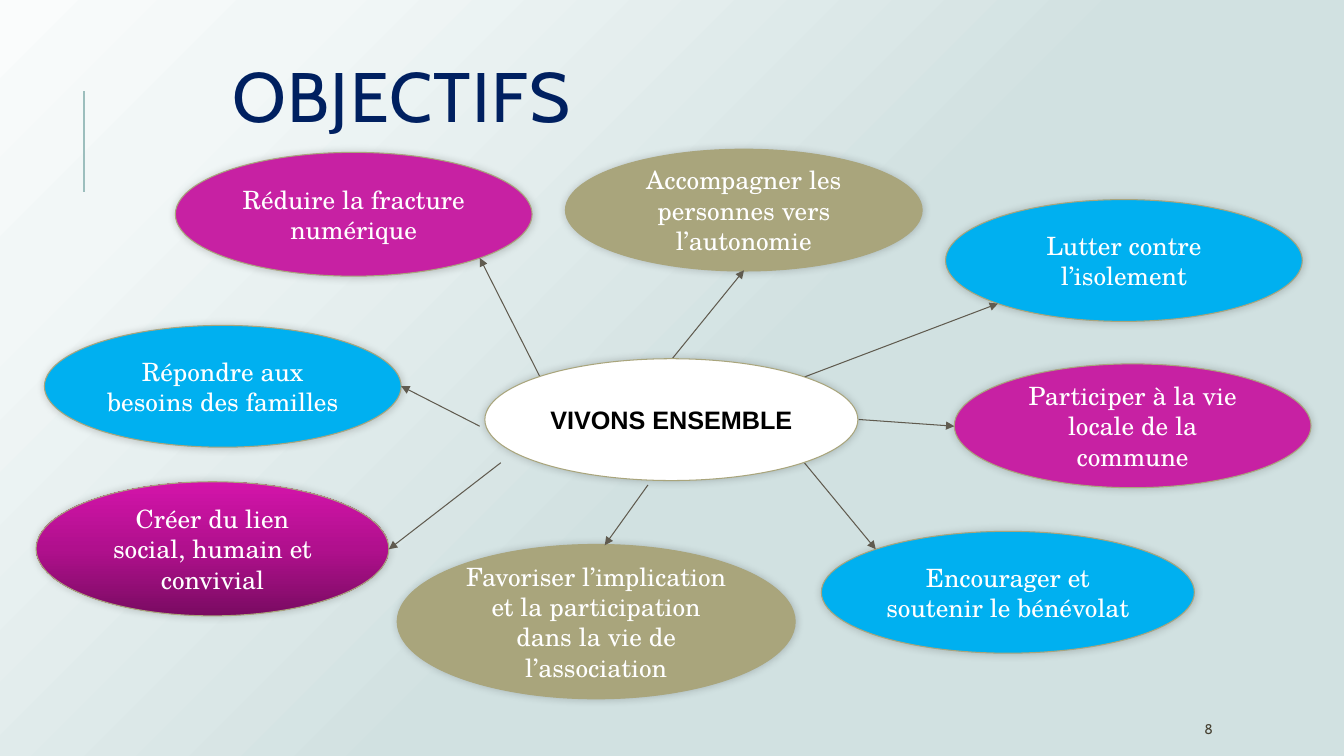
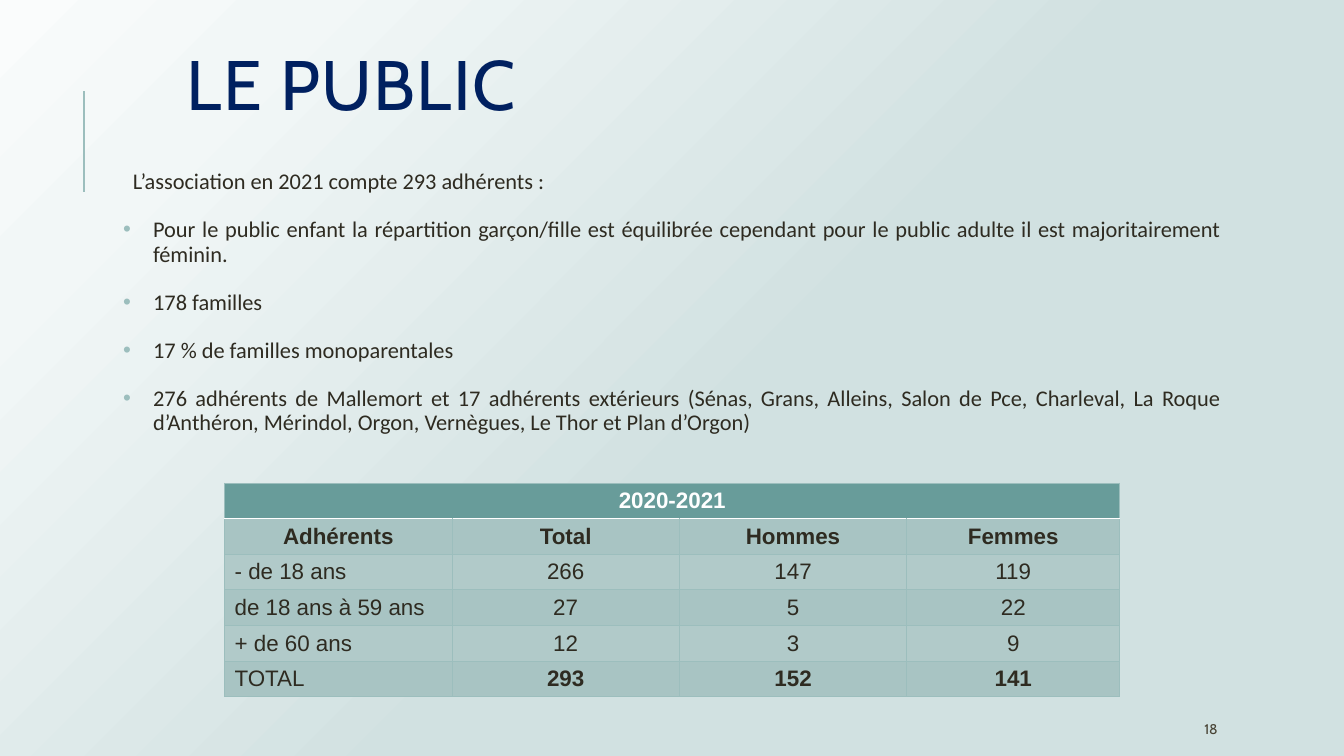
from pptx import Presentation
from pptx.dml.color import RGBColor as RGB
from pptx.enum.shapes import MSO_CONNECTOR as CONN, MSO_SHAPE as SHAPE
from pptx.enum.text import MSO_ANCHOR as ANCHOR, MSO_AUTO_SIZE as AUTO, PP_ALIGN as ALIGN
from pptx.oxml import parse_xml
from pptx.util import Cm, Pt

NS = 'xmlns:a="http://schemas.openxmlformats.org/drawingml/2006/main"'
C = {
    "navy": "002060", "ink": "2E2B21", "number": "474233", "white": "FFFFFF", "black": "000000",
    "teal": "9CBEBD", "header": "689C9A", "band": "A8C4C3", "plain": "B1CAC9",
    "khaki": "A9A57C", "pink": "C721A3", "blue": "00B0F0", "arrow": "605B4F",
}
BACKGROUND = [(0, "FAFCFC"), (15, "F2F7F7"), (55, "D1E1E1"), (100, "D2E2E1")]
PINK_FADE = [(0, "7A0B62"), (50, "B0108D"), (100, "D314AA")]

# Text formats
TITLE = {"name": "Cabin", "size": Pt(50), "bold": False}
NUMBER = {"name": "Cabin", "size": Pt(10)}
BODY = {"name": "Calibri", "size": Pt(16)}
GOAL = {"name": "TeX Gyre Schola", "size": Pt(18)}
CENTRE = {"name": "Arial", "size": Pt(18), "bold": True}
CELL = {"name": "Arial", "size": Pt(16), "bold": False}


def write(p, text, fmt, color, align=ALIGN.LEFT):
    p.alignment = align
    r = p.add_run()
    r.text = text
    for key, value in fmt.items():
        setattr(r.font, key, value)
    r.font.color.rgb = RGB.from_string(C[color])
    return r


def set_gradient(fill, stops, angle):
    fill.gradient()
    fill.gradient_angle = angle
    gs_lst = fill.gradient_stops[0]._gs.getparent()
    for gs in list(gs_lst):
        gs_lst.remove(gs)
    for pos, color in stops:
        gs_lst.append(parse_xml(
            f'<a:gs {NS} pos="{pos * 1000}"><a:srgbClr val="{color}"/></a:gs>'))


prs = Presentation()
prs.slide_width, prs.slide_height = Cm(33.87), Cm(19.05)
set_gradient(prs.slide_master.background.fill, BACKGROUND, 315)

# Shared parts: title, side rule, page number
slides = []
for layout, title, box, number in [
    (5, "OBJECTIFS", (5.61, 1.04, 20.37, 3.07), "8"),
    (1, "LE PUBLIC", (4.45, 1.07, 21.31, 2.39), "18"),
]:
    s = prs.slides.add_slide(prs.slide_layouts[layout])
    slides.append(s)

    sp = s.shapes.title
    sp.left, sp.top, sp.width, sp.height = map(Cm, box)
    tf = sp.text_frame
    tf.auto_size, tf.vertical_anchor = AUTO.NONE, ANCHOR.MIDDLE
    p = tf.paragraphs[0]
    p.line_spacing = 0.8
    r = write(p, title, TITLE, "navy")
    r.font._element.set("spc", "100")

    rule = s.shapes.add_connector(CONN.STRAIGHT, Cm(2.11), Cm(4.83), Cm(2.11), Cm(2.29))
    rule.line.color.rgb, rule.line.width = RGB.from_string(C["teal"]), Pt(1.5)
    rule._element.spPr.append(parse_xml(f"<a:effectLst {NS}/>"))

    tf = s.shapes.add_textbox(Cm(30.1), Cm(17.98), Cm(2.69), Cm(0.76)).text_frame
    tf.word_wrap, tf.vertical_anchor = True, ANCHOR.MIDDLE
    write(tf.paragraphs[0], number, NUMBER, "number")

goals_slide, public_slide = slides

# Goals around the centre: text, box, fill, arrow from and to
goals = [
    ("Créer du lien social, humain et convivial",
     (0.91, 12.14, 8.89, 3.38), None, (12.62, 11.66, 9.8, 13.84)),
    ("Favoriser l’implication et la participation dans la vie de l’association",
     (10.01, 13.72, 10.03, 3.89), "khaki", (16.33, 12.22, 15.24, 13.74)),
    ("Participer à la vie locale de la commune",
     (24.05, 9.17, 8.99, 3.12), "pink", (21.64, 10.57, 24.05, 10.74)),
    ("Lutter contre l’isolement",
     (23.83, 5.03, 8.99, 3.07), "blue", (20.27, 9.5, 25.15, 7.65)),
    ("Accompagner les personnes vers l’autonomie",
     (14.25, 3.76, 8.99, 3.07), "khaki", (16.94, 9.04, 18.75, 6.81)),
    ("Encourager et soutenir le bénévolat",
     (20.7, 13.39, 9.4, 3.07), "blue", (20.27, 11.66, 22.07, 13.84)),
    ("Réduire la fracture numérique",
     (4.42, 3.84, 8.99, 3.12), "pink", (13.61, 9.5, 12.09, 6.5)),
    ("Répondre aux besoins des familles",
     (1.12, 8.2, 8.99, 3.07), "blue", (12.09, 10.74, 10.11, 9.73)),
    ("VIVONS ENSEMBLE", (12.22, 9.04, 9.4, 3.07), "white", None),
]
for text, box, color, arrow in goals:
    sp = goals_slide.shapes.add_shape(SHAPE.OVAL, *map(Cm, box))
    if color:
        sp.fill.solid()
        sp.fill.fore_color.rgb = RGB.from_string(C[color])
    else:
        set_gradient(sp.fill, PINK_FADE, 90)
    sp.line.color.rgb, sp.line.width = RGB.from_string(C["khaki"]), Pt(0.75)
    sp.shadow.inherit = False
    sp._element.spPr.find("{*}effectLst").append(parse_xml(
        f'<a:outerShdw {NS} blurRad="{Pt(6)}" dist="0" dir="0" rotWithShape="0">'
        f'<a:srgbClr val="{C["black"]}"><a:alpha val="20000"/></a:srgbClr></a:outerShdw>'))
    tf = sp.text_frame
    tf.word_wrap, tf.vertical_anchor = True, ANCHOR.MIDDLE
    fmt, ink = (GOAL, "white") if arrow else (CENTRE, "black")
    write(tf.paragraphs[0], text, fmt, ink, ALIGN.CENTER)

    if arrow:
        line = goals_slide.shapes.add_connector(CONN.STRAIGHT, *map(Cm, arrow))
        line.line.color.rgb, line.line.width = RGB.from_string(C["arrow"]), Pt(0.75)
        line.line._get_or_add_ln().append(parse_xml(f'<a:tailEnd {NS} type="triangle"/>'))
        line._element.spPr.append(parse_xml(f"<a:effectLst {NS}/>"))

# Membership facts
facts = [
    "L’association en 2021 compte 293 adhérents :",
    "Pour le public enfant la répartition garçon/fille est équilibrée cependant pour le "
    "public adulte il est majoritairement féminin.",
    "178 familles",
    "17 % de familles monoparentales",
    "276 adhérents de Mallemort et 17 adhérents extérieurs (Sénas, Grans, Alleins, Salon de "
    "Pce, Charleval, La Roque d’Anthéron, Mérindol, Orgon, Vernègues, Le Thor et Plan d’Orgon)",
]
sp = public_slide.placeholders[1]
sp.left, sp.top, sp.width, sp.height = map(Cm, (2.97, 4.17, 27.94, 13.34))
tf = sp.text_frame
tf.auto_size, tf.vertical_anchor = AUTO.NONE, ANCHOR.TOP
for side in ("left", "top", "right", "bottom"):
    setattr(tf, f"margin_{side}", Cm(0.13))
for i, fact in enumerate(facts):
    p = tf.add_paragraph() if i else tf.paragraphs[0]
    p.line_spacing, p.space_before, p.space_after = 0.9, Pt(17 if i else 0), Pt(0)
    write(p, fact, BODY, "ink", ALIGN.JUSTIFY)
    pPr = p._p.get_or_add_pPr()
    pPr.set("marL", str(Cm(0.76 if i else 0.25)))
    pPr.set("indent", str(Cm(-0.79 if i else 0)))
    bullet = [f'<a:buClr {NS}><a:srgbClr val="{C["teal"]}"/></a:buClr>',
              f'<a:buFont {NS} typeface="Arial"/>',
              f'<a:buChar {NS} char="•"/>'] if i else [f"<a:buNone {NS}/>"]
    for xml in bullet:
        pPr.append(parse_xml(xml))

# Membership table
rows = [
    ("2020-2021", "", "", ""),
    ("Adhérents", "Total", "Hommes", "Femmes"),
    ("- de 18 ans", "266", "147", "119"),
    ("de 18 ans à 59 ans", "27", "5", "22"),
    ("+ de 60 ans", "12", "3", "9"),
    ("TOTAL", "293", "152", "141"),
]
widths = (5.73, 5.73, 5.73, 5.37)
last = len(rows) - 1
table = public_slide.shapes.add_table(
    len(rows), len(widths), Cm(5.66), Cm(12.17), Cm(sum(widths)), Cm(0.88 * len(rows))).table
for col, width in zip(table.columns, widths):
    col.width = Cm(width)
for i, row in enumerate(rows):
    table.rows[i].height = Cm(0.88)
    for j, text in enumerate(row):
        cell = table.cell(i, j)
        cell.margin_top = cell.margin_bottom = Cm(0.11)
        cell.vertical_anchor = ANCHOR.MIDDLE
        tcPr = cell._tc.get_or_add_tcPr()
        for side in "LRTB":
            under_header = (i, side) in ((0, "B"), (1, "T"))
            color, width = ("white", 1.25) if under_header else ("teal", 0.75)
            tcPr.append(parse_xml(
                f'<a:ln{side} {NS} w="{Pt(width)}"><a:solidFill><a:srgbClr val="{C[color]}"/>'
                f"</a:solidFill></a:ln{side}>"))
        cell.fill.solid()
        fill = "header" if i == 0 else "band" if i % 2 else "plain"
        cell.fill.fore_color.rgb = RGB.from_string(C[fill])
        if text:
            bold = i < 2 or (i == last and j > 0)
            align = ALIGN.CENTER if i < 2 or j else ALIGN.LEFT
            write(cell.text_frame.paragraphs[0], text, {**CELL, "bold": bold},
                  "ink" if i else "white", align)
table.cell(0, 0).merge(table.cell(0, len(widths) - 1))

prs.save("out.pptx")
